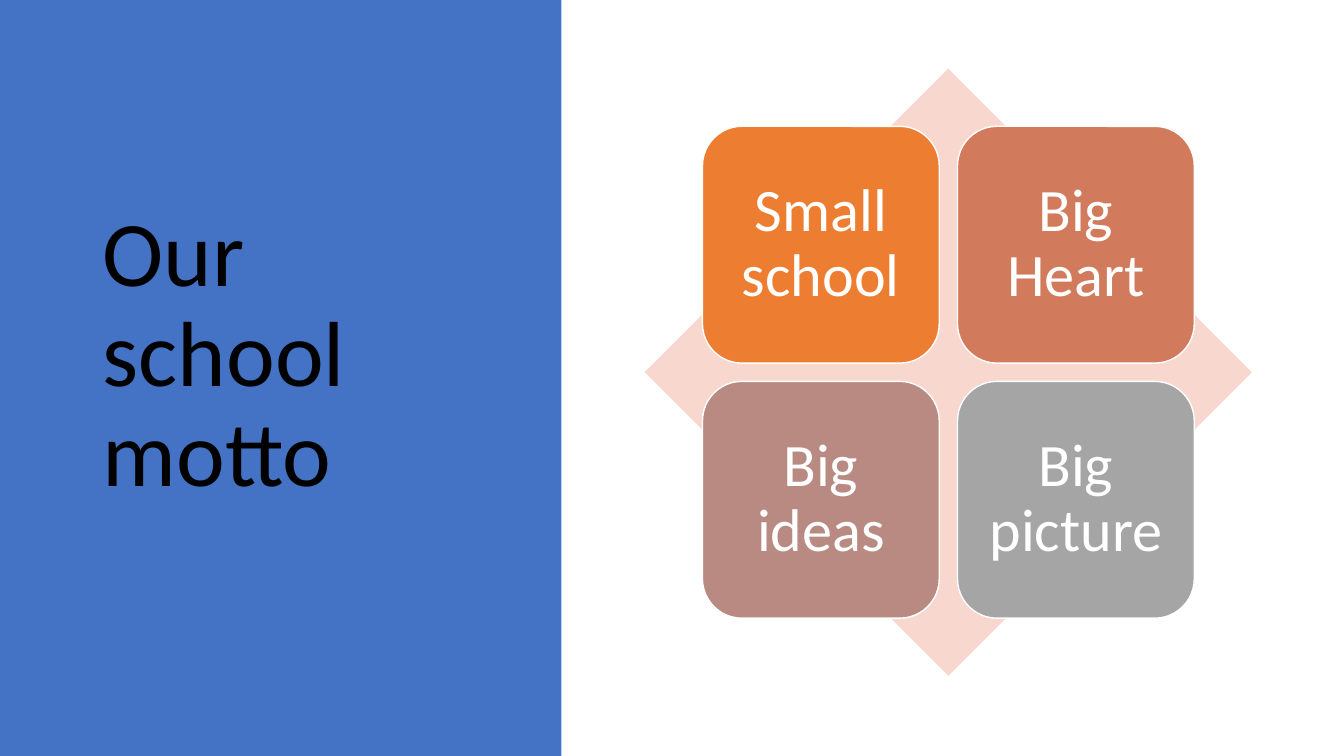
from dataclasses import dataclass
from itertools import product

from pptx import Presentation
from pptx.dml.color import RGBColor
from pptx.enum.shapes import MSO_SHAPE
from pptx.enum.text import MSO_ANCHOR, PP_ALIGN
from pptx.util import Cm, Pt


@dataclass(frozen=True)
class Theme:
    font: str = "Calibri"
    panel: str = "4472C4"
    diamond: str = "F8D7CE"
    cards: tuple = ("ED7D31", "D17B5C", "B98A82", "A5A5A5")
    dark: str = "000000"
    light: str = "FFFFFF"
    title_size: int = 66
    card_size: int = 43


THEME = Theme()
MOTTO = ("Small school", "Big Heart", "Big ideas", "Big picture")


def add_filled(s, preset, left, top, width, height, fill, line=None):
    sp = s.shapes.add_shape(preset, Cm(left), Cm(top), Cm(width), Cm(height))
    sp.shadow.inherit = False
    sp.fill.solid()
    sp.fill.fore_color.rgb = RGBColor.from_string(fill)
    if line:
        sp.line.color.rgb = RGBColor.from_string(line)
        sp.line.width = Pt(1)
    else:
        sp.line.fill.background()
    return sp


def set_text(sp, text, *, size, color, align=PP_ALIGN.LEFT,
             anchor=MSO_ANCHOR.TOP, inset=(0.25, 0.13)):
    tf = sp.text_frame
    tf.word_wrap = True
    tf.vertical_anchor = anchor
    tf.margin_left = tf.margin_right = Cm(inset[0])
    tf.margin_top = tf.margin_bottom = Cm(inset[1])
    p = tf.paragraphs[0]
    p.alignment = align
    p.line_spacing = 0.9
    r = p.add_run()
    r.text = text
    r.font.name = THEME.font
    r.font.size = Pt(size)
    r.font.color.rgb = RGBColor.from_string(color)


def add_title_panel(s, left, top, width, height):
    add_filled(s, MSO_SHAPE.RECTANGLE, left, top, width, height, THEME.panel)
    sp = s.shapes.add_textbox(Cm(left + 2.34), Cm(top + 5.08), Cm(9.14), Cm(6.63))
    set_text(sp, "Our school motto", size=THEME.title_size, color=THEME.dark)


def add_motto_matrix(s, left, top, size):
    add_filled(s, MSO_SHAPE.DIAMOND, left, top, size, size, THEME.diamond)
    card, gap = size * 0.39, size * 0.03
    margin = (size - 2 * card - gap) / 2
    for (row, col), text, fill in zip(product(range(2), repeat=2), MOTTO, THEME.cards):
        sp = add_filled(s, MSO_SHAPE.ROUNDED_RECTANGLE,
                        left + margin + col * (card + gap),
                        top + margin + row * (card + gap),
                        card, card, fill, THEME.light)
        set_text(sp, text, size=THEME.card_size, color=THEME.light,
                 align=PP_ALIGN.CENTER, anchor=MSO_ANCHOR.MIDDLE, inset=(0.45, 0.45))


def main():
    prs = Presentation()
    prs.slide_width, prs.slide_height = Cm(33.87), Cm(19.05)
    s = prs.slides.add_slide(prs.slide_layouts[6])
    add_title_panel(s, 0, 0, 14.15, 19.05)
    add_motto_matrix(s, 16.25, 1.73, 15.3)
    prs.save("out.pptx")


if __name__ == "__main__":
    main()
